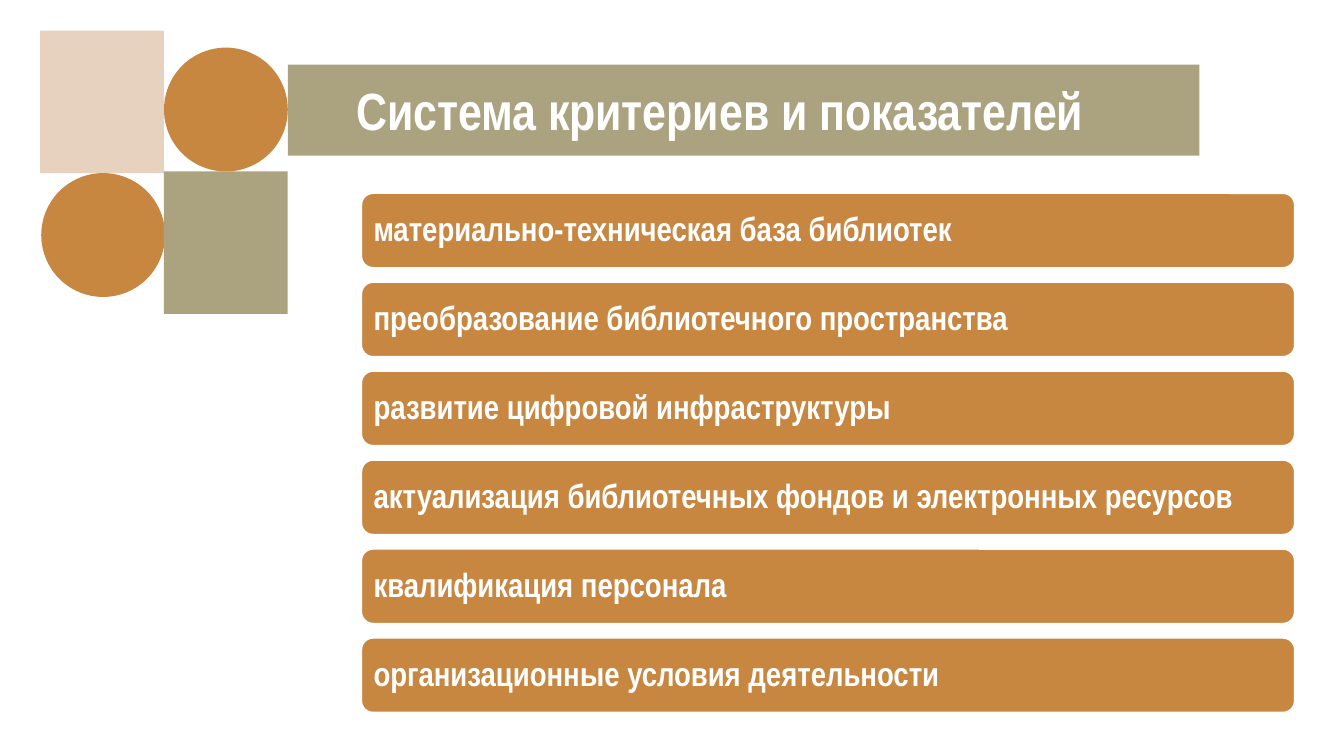
from typing import NamedTuple

from pptx import Presentation
from pptx.dml.color import RGBColor
from pptx.enum.shapes import MSO_SHAPE
from pptx.enum.text import MSO_ANCHOR, PP_ALIGN
from pptx.util import Cm, Pt

WHITE = RGBColor(0xFF, 0xFF, 0xFF)
SAND = RGBColor(0xE7, 0xD2, 0xBF)
OCHRE = RGBColor(0xC8, 0x87, 0x41)
OLIVE = RGBColor(0xAB, 0xA3, 0x7F)
FONT = "Arial Narrow"


class Block(NamedTuple):
    kind: MSO_SHAPE
    left: float
    top: float
    width: float
    height: float
    color: RGBColor


DECOR = [
    Block(MSO_SHAPE.RECTANGLE, 0.76, 0.58, 2.34, 2.69, SAND),
    Block(MSO_SHAPE.OVAL, 0.78, 3.27, 2.34, 2.34, OCHRE),
    Block(MSO_SHAPE.OVAL, 3.1, 0.9, 2.34, 2.34, OCHRE),
    Block(MSO_SHAPE.RECTANGLE, 3.1, 3.24, 2.34, 2.69, OLIVE),
    Block(MSO_SHAPE.RECTANGLE, 5.44, 1.22, 17.23, 1.72, OLIVE),
]

CRITERIA = [
    "материально-техническая база библиотек",
    "преобразование библиотечного пространства",
    "развитие цифровой инфраструктуры",
    "актуализация библиотечных фондов и электронных ресурсов",
    "квалификация персонала",
    "организационные условия деятельности",
]
BAR_LEFT, BAR_TOP, BAR_WIDTH, BAR_HEIGHT = 6.81, 3.63, 17.68, 1.45
BAR_PITCH = 1.68


def draw_block(s, block: Block):
    sp = s.shapes.add_shape(block.kind, Cm(block.left), Cm(block.top),
                            Cm(block.width), Cm(block.height))
    sp.shadow.inherit = False
    sp.fill.solid()
    sp.fill.fore_color.rgb = block.color
    sp.line.fill.background()
    return sp


def set_text(sp, text: str, size: int) -> None:
    tf = sp.text_frame
    tf.text = text
    tf.vertical_anchor = MSO_ANCHOR.MIDDLE
    p = tf.paragraphs[0]
    p.alignment = PP_ALIGN.LEFT
    font = p.runs[0].font
    font.name, font.size, font.bold = FONT, Pt(size), True
    font.color.rgb = WHITE


def draw_bar(s, index: int, text: str) -> None:
    sp = draw_block(s, Block(MSO_SHAPE.ROUNDED_RECTANGLE, BAR_LEFT,
                             BAR_TOP + index * BAR_PITCH,
                             BAR_WIDTH, BAR_HEIGHT, OCHRE))
    sp.line.color.rgb = WHITE
    sp.line.width = Pt(2)
    set_text(sp, text, 18)
    tf = sp.text_frame
    tf.margin_left = tf.margin_right = Cm(0.18)
    tf.margin_top = tf.margin_bottom = Cm(0.18)
    tf.paragraphs[0].line_spacing = 0.9


def main() -> None:
    prs = Presentation()
    prs.slide_width, prs.slide_height = Cm(25.4), Cm(14.28)
    s = prs.slides.add_slide(prs.slide_layouts[5])

    # Corner ornament and title band
    for block in DECOR:
        draw_block(s, block)

    # Criteria bars
    for index, text in enumerate(CRITERIA):
        draw_bar(s, index, text)

    # Title, brought in front of its band
    title = s.shapes.title
    title.left, title.top = Cm(6.48), Cm(1.35)
    title.width, title.height = Cm(14.53), Cm(1.45)
    set_text(title, "Система критериев и показателей", 28)
    title.text_frame.word_wrap = False
    title.element.getparent().append(title.element)

    prs.save("out.pptx")


if __name__ == "__main__":
    main()
